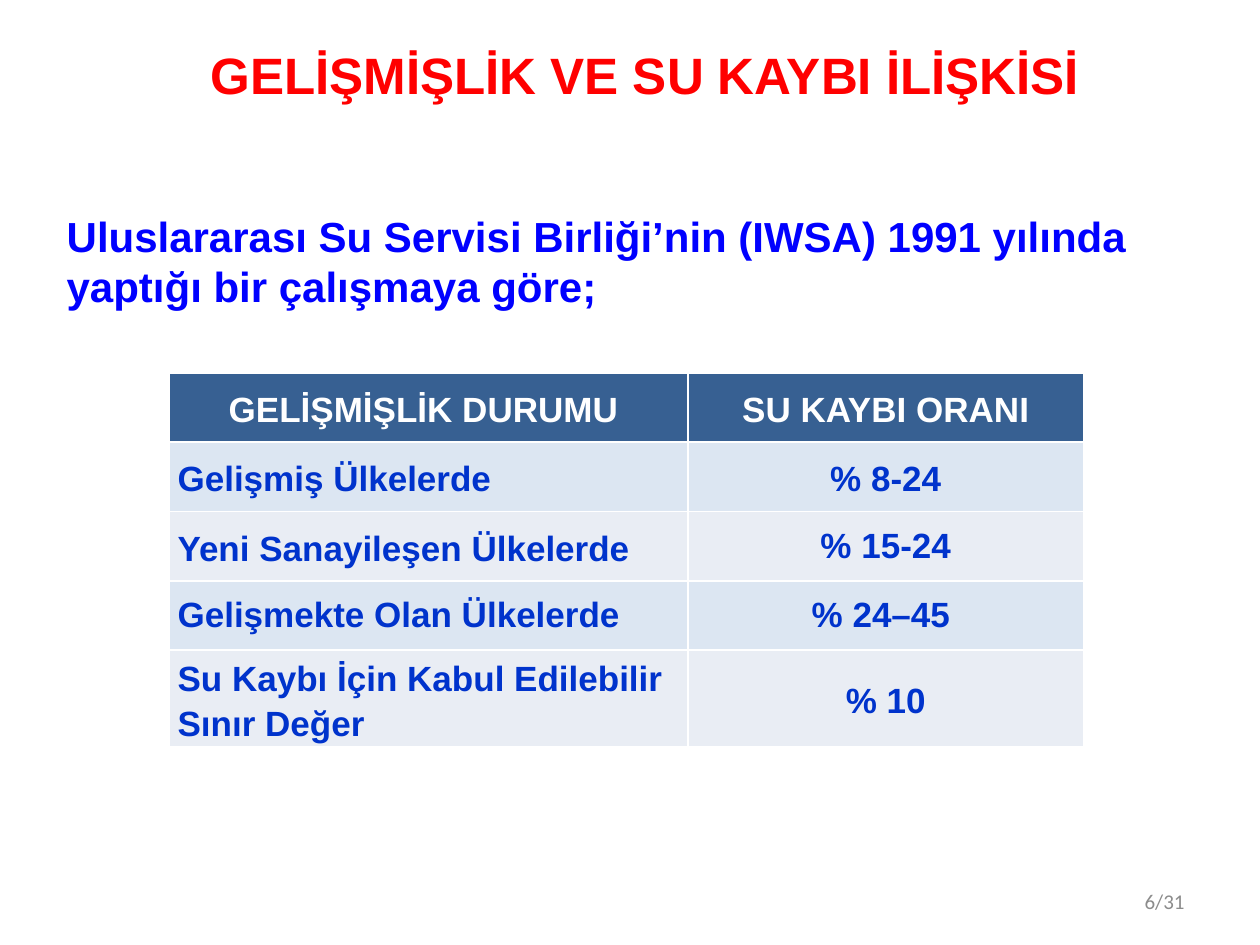
from lxml.etree import SubElement
from pptx import Presentation
from pptx.dml.color import RGBColor
from pptx.enum.text import MSO_ANCHOR, PP_ALIGN
from pptx.oxml.ns import qn
from pptx.util import Pt

RED = RGBColor(0xFF, 0x00, 0x00)
BLUE = RGBColor(0x00, 0x00, 0xFF)
CELL_BLUE = RGBColor(0x00, 0x33, 0xCC)
WHITE = RGBColor(0xFF, 0xFF, 0xFF)
GRAY = RGBColor(0x8C, 0x8C, 0x8C)
HEADER_FILL = RGBColor(0x37, 0x60, 0x92)
BAND_FILLS = (RGBColor(0xE9, 0xED, 0xF4), RGBColor(0xDC, 0xE6, 0xF2))

LOOSE, SINGLE = 1.15, 1.0
COLUMN_WIDTHS = (296.6, 226.1)
ROW_HEIGHT = 39.6
LOSS_RATES = (
    (("GELİŞMİŞLİK DURUMU ", LOOSE), ("SU KAYBI ORANI", LOOSE)),
    (("Gelişmiş Ülkelerde", LOOSE), ("% 8-24", LOOSE)),
    (("Yeni Sanayileşen Ülkelerde", LOOSE), ("% 15-24", SINGLE)),
    (("Gelişmekte Olan Ülkelerde", SINGLE), ("% 24–45 ", SINGLE)),
    (("Su Kaybı İçin Kabul Edilebilir Sınır Değer", LOOSE), ("% 10", LOOSE)),
)


def write(paragraph, wording, size, color, align, font="Arial", bold=True):
    paragraph.alignment = align
    run = paragraph.add_run()
    run.text = wording
    run.font.name = font
    run.font.size = Pt(size)
    run.font.bold = bold
    run.font.color.rgb = color


def add_text(slide, left, top, width, height, anchor, wording, *style, **options):
    box = slide.shapes.add_textbox(Pt(left), Pt(top), Pt(width), Pt(height))
    frame = box.text_frame
    frame.word_wrap = True
    frame.vertical_anchor = anchor
    write(frame.paragraphs[0], wording, *style, **options)


def add_borders(cell, color, width):
    properties = cell._tc.get_or_add_tcPr()
    for position, side in enumerate(("lnL", "lnR", "lnT", "lnB")):
        line = SubElement(properties, qn(f"a:{side}"), w=str(Pt(width)))
        fill = SubElement(line, qn("a:solidFill"))
        SubElement(fill, qn("a:srgbClr"), val=str(color))
        properties.insert(position, line)


def fill_cell(cell, wording, spacing, color, fill, align):
    cell.fill.solid()
    cell.fill.fore_color.rgb = fill
    add_borders(cell, WHITE, 1)
    cell.vertical_anchor = MSO_ANCHOR.MIDDLE
    cell.margin_left = cell.margin_right = Pt(5)
    cell.margin_top = cell.margin_bottom = Pt(0)
    paragraph = cell.text_frame.paragraphs[0]
    paragraph.line_spacing = spacing
    write(paragraph, wording, 20, color, align)


def add_loss_table(slide, left, top):
    table = slide.shapes.add_table(
        len(LOSS_RATES), len(COLUMN_WIDTHS), Pt(left), Pt(top),
        Pt(sum(COLUMN_WIDTHS)), Pt(ROW_HEIGHT * len(LOSS_RATES))).table
    for column, width in zip(table.columns, COLUMN_WIDTHS):
        column.width = Pt(width)
    for row_index, entries in enumerate(LOSS_RATES):
        table.rows[row_index].height = Pt(ROW_HEIGHT)
        header = row_index == 0
        color = WHITE if header else CELL_BLUE
        fill = HEADER_FILL if header else BAND_FILLS[row_index % 2]
        for column_index, (wording, spacing) in enumerate(entries):
            centered = header or column_index == 1
            align = PP_ALIGN.CENTER if centered else PP_ALIGN.LEFT
            fill_cell(table.cell(row_index, column_index), wording, spacing,
                      color, fill, align)


def main():
    presentation = Presentation()
    presentation.slide_width = Pt(720)
    presentation.slide_height = Pt(540)
    slide = presentation.slides.add_slide(presentation.slide_layouts[6])
    add_text(slide, 87.8, 0, 561.6, 85, MSO_ANCHOR.MIDDLE,
             "GELİŞMİŞLİK VE SU KAYBI İLİŞKİSİ", 29.2, RED, PP_ALIGN.CENTER)
    add_text(slide, 31, 116.6, 669, 65.5, MSO_ANCHOR.TOP,
             "Uluslararası Su Servisi Birliği’nin (IWSA) 1991 yılında "
             "yaptığı bir çalışmaya göre;", 24, BLUE, PP_ALIGN.LEFT)
    add_loss_table(slide, 96.5, 213.1)
    add_text(slide, 516, 500.4, 168, 28.8, MSO_ANCHOR.MIDDLE,
             "6/31", 12, GRAY, PP_ALIGN.RIGHT, font="Calibri", bold=False)
    presentation.save("out.pptx")


if __name__ == "__main__":
    main()
